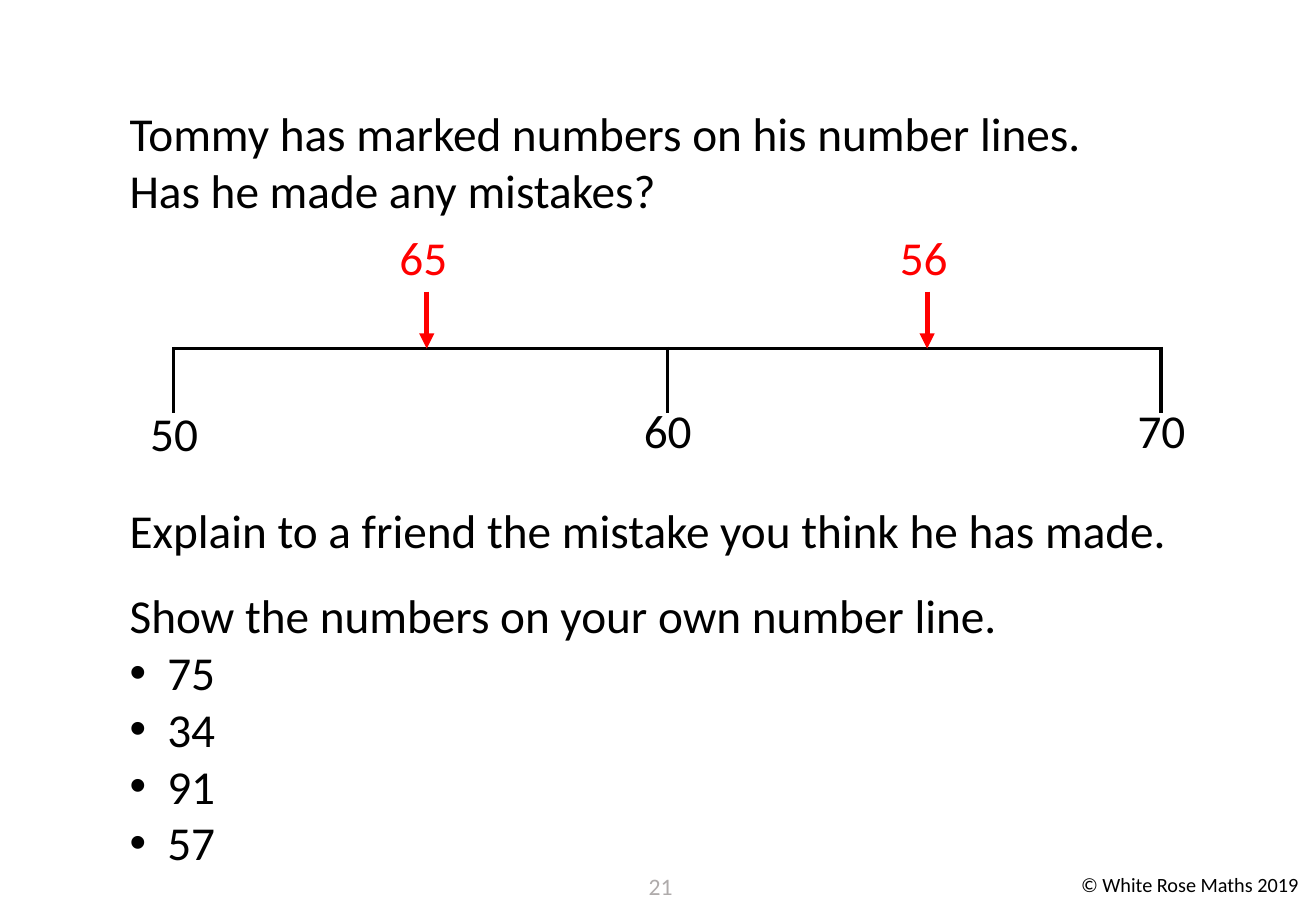
from dataclasses import dataclass

from lxml import etree
from pptx import Presentation
from pptx import util as u
from pptx.dml.color import RGBColor
from pptx.enum import shapes, text
from pptx.oxml.ns import qn


@dataclass(frozen=True)
class Theme:
    font: str = "Calibri"
    black: str = "000000"
    red: str = "FF0000"
    grey: str = "AFABAB"
    body_size: float = 28
    number_size: float = 14
    footer_size: float = 12
    ruler_width: float = 2.25
    arrow_width: float = 3


class SlideBuilder:
    def __init__(self, presentation, theme):
        self.theme = theme
        self.slide = presentation.slides.add_slide(presentation.slide_layouts[6])

    def text_box(self, left, top, width, height, lines, size=None, color=None, align=None):
        """Lines are (text, space before in points, bulleted)."""
        box = self.slide.shapes.add_textbox(u.Cm(left), u.Cm(top), u.Cm(width), u.Cm(height))
        frame = box.text_frame
        frame.word_wrap = True
        frame.text = "\n".join(line for line, _, _ in lines)
        for paragraph, (_, space, bulleted) in zip(frame.paragraphs, lines):
            if bulleted:
                self.bullet(paragraph)
            if space:
                paragraph.space_before = u.Pt(space)
            paragraph.alignment = align or text.PP_ALIGN.LEFT
            for run in paragraph.runs:
                run.font.name = self.theme.font
                run.font.size = u.Pt(size or self.theme.body_size)
                run.font.color.rgb = RGBColor.from_string(color or self.theme.black)

    def bullet(self, paragraph):
        properties = paragraph._p.get_or_add_pPr()
        indent = u.Cm(0.79)
        properties.set("marL", str(indent))
        properties.set("indent", str(-indent))
        etree.SubElement(properties, qn("a:buFont"), typeface="Arial")
        etree.SubElement(properties, qn("a:buChar"), char="•")

    def label(self, left, top, value, color=None):
        self.text_box(left, top, 1.63, 1.45, [(value, 0, False)], color=color)

    def ruler(self, left, top, width, height, intervals):
        frame = self.slide.shapes.add_table(
            1, intervals, u.Cm(left), u.Cm(top), u.Cm(width), u.Cm(height))
        table = frame.table
        table.first_row = table.horz_banding = False
        for cell in table.iter_cells():
            self.borders(cell)
            cell.fill.background()

    def borders(self, cell):
        properties = cell._tc.get_or_add_tcPr()
        for side in ("lnL", "lnR", "lnT"):
            line = etree.SubElement(properties, qn(f"a:{side}"),
                                    w=str(u.Pt(self.theme.ruler_width)))
            fill = etree.SubElement(line, qn("a:solidFill"))
            etree.SubElement(fill, qn("a:srgbClr"), val=self.theme.black)
        bottom = etree.SubElement(properties, qn("a:lnB"))
        etree.SubElement(bottom, qn("a:noFill"))

    def down_arrow(self, x, top, bottom):
        arrow = self.slide.shapes.add_connector(
            shapes.MSO_CONNECTOR.STRAIGHT, u.Cm(x), u.Cm(top), u.Cm(x), u.Cm(bottom))
        arrow.line.color.rgb = RGBColor.from_string(self.theme.red)
        arrow.line.width = u.Pt(self.theme.arrow_width)
        etree.SubElement(arrow.line._get_or_add_ln(), qn("a:tailEnd"), type="triangle")
        etree.SubElement(arrow._element.spPr, qn("a:effectLst"))


def main():
    presentation = Presentation()
    presentation.slide_width = u.Cm(27.51)
    presentation.slide_height = u.Cm(19.05)
    theme = Theme()
    builder = SlideBuilder(presentation, theme)

    # Footer and page number
    builder.text_box(22.35, 18.11, 6.88, 0.76, [("© White Rose Maths 2019", 0, False)],
                     size=theme.footer_size)
    builder.text_box(13.16, 18.11, 1.3, 1.02, [("21", 0, False)], size=theme.number_size,
                     color=theme.grey, align=text.PP_ALIGN.CENTER)

    # Questions, with room for the number line
    questions = [
        ("Tommy has marked numbers on his number lines.", 0, False),
        ("Has he made any mistakes?", 0, False),
        ("Explain to a friend the mistake you think he has made.", 168, False),
        ("Show the numbers on your own number line.", 17, False),
    ]
    numbers = [(number, 0, True) for number in ("75", "34", "91", "57")]
    builder.text_box(2.46, 2.06, 22.38, 17.02, questions + numbers)

    # Number line with its scale
    line_left, line_top, interval = 3.63, 7.29, 10.32
    builder.ruler(line_left, line_top, 2 * interval, 1.35, 2)
    for index, (value, top) in enumerate((("50", 8.33), ("60", 8.26), ("70", 8.26))):
        builder.label(line_left + index * interval - 0.74, top, value)

    # Tommy's marks
    for value, x in (("65", 8.92), ("56", 19.38)):
        builder.label(x - 0.82, 4.65, value, theme.red)
        builder.down_arrow(x, 6.1, line_top)

    presentation.save("out.pptx")


if __name__ == "__main__":
    main()
